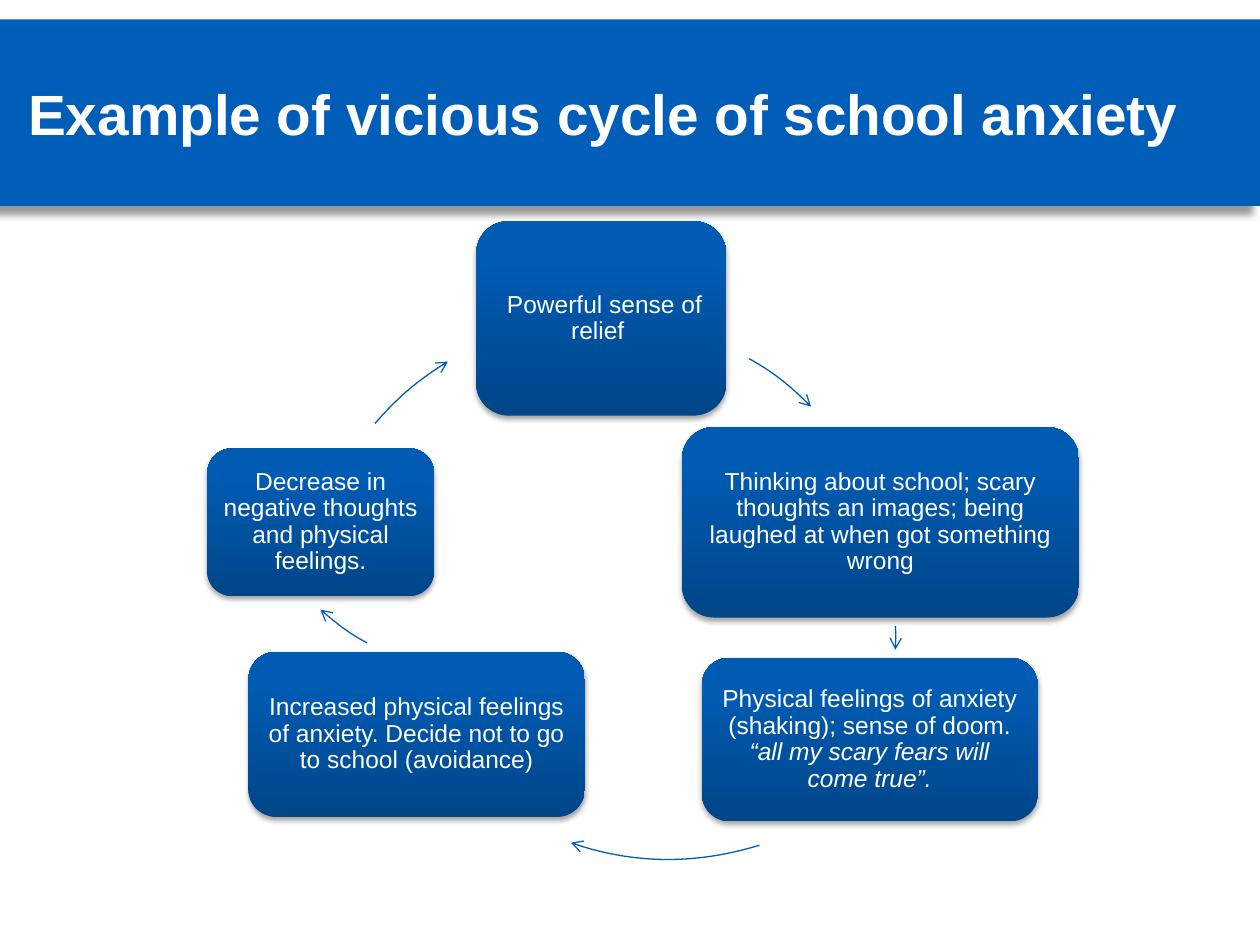
from copy import deepcopy
from typing import NamedTuple

from lxml.etree import SubElement as Sub
from pptx import Presentation
from pptx.dml.color import RGBColor
from pptx.enum.shapes import MSO_SHAPE as Kind
from pptx.enum.text import MSO_ANCHOR as Anchor, PP_ALIGN as Align
from pptx.oxml.ns import qn
from pptx.util import Cm, Pt

BLUE = RGBColor(0x00, 0x5E, 0xB8)
WHITE = RGBColor(0xFF, 0xFF, 0xFF)
STOPS = [
    (0, RGBColor(0x00, 0x46, 0x89)),
    (0.8, RGBColor(0x00, 0x5B, 0xB2)),
    (1, RGBColor(0x00, 0x5C, 0xB3)),
]
FONT = "Arial"
RING = 11.89  # side of the square around each curve's circle, in cm
Point = tuple[float, float]


class Run(NamedTuple):
    text: str
    size: float = 14
    bold: bool = False
    italic: bool = False


class Step(NamedTuple):
    left: float
    top: float
    width: float
    height: float
    runs: list[Run]


class Curve(NamedTuple):
    """Corner of the ring, then start, two control points and end, in cm."""
    ring: Point
    start: Point
    bend: Point
    pull: Point
    end: Point


STEPS = [
    Step(9.6, 4.46, 5.04, 3.92, [Run(" Powerful sense of relief ")]),
    Step(13.75, 8.61, 8, 3.84, [Run(
        "Thinking about school; scary thoughts an images; "
        "being laughed at when got something wrong")]),
    Step(14.15, 13.26, 6.77, 3.3, [
        Run("Physical feelings of anxiety (shaking); sense of doom. "),
        Run("“all my scary fears will come true”.", italic=True)]),
    Step(5.01, 13.14, 6.78, 3.33, [Run(
        "Increased physical feelings of anxiety. "
        "Decide not to go to school (avoidance)")]),
    Step(4.18, 9.04, 4.57, 2.98, [Run(
        "Decrease in negative thoughts and physical feelings.")]),
]
CURVES = [
    Curve((6.17, 6.43),
          (15.1, 7.23), (15.57, 7.49), (15.98, 7.82), (16.35, 8.2)),
    Curve((6.17, 6.86),
          (18.05, 12.62), (18.06, 12.78), (18.06, 12.94), (18.05, 13.1)),
    Curve((7.54, 5.44),
          (15.31, 17.04), (14.07, 17.42), (12.73, 17.42), (11.51, 16.99)),
    Curve((4.47, 1.91),
          (7.4, 12.96), (7.06, 12.78), (6.76, 12.55), (6.46, 12.29)),
    Curve((6.17, 6.43),
          (7.56, 8.54), (7.98, 8.05), (8.48, 7.62), (9.03, 7.29)),
]


def add_shade(shape, alpha: int, blur: float, dist: float, angle: int) -> None:
    """Give the shape an outer shadow; blur and distance are in points."""
    shape.shadow.inherit = False
    effects = shape._element.spPr.find(qn("a:effectLst"))
    shade = Sub(effects, qn("a:outerShdw"), blurRad=str(Pt(blur)),
                dist=str(Pt(dist)), dir=str(angle * 60000), rotWithShape="0")
    color = Sub(shade, qn("a:srgbClr"), val="000000")
    Sub(color, qn("a:alpha"), val=str(alpha * 1000))


def fill_grade(shape) -> None:
    fill = shape.fill
    fill.gradient()
    fill.gradient_angle = 90
    stops = shape._element.spPr.find(qn("a:gradFill")).find(qn("a:gsLst"))
    stops.append(deepcopy(stops[0]))
    for stop, (place, color) in zip(fill.gradient_stops, STOPS):
        stop.position = place
        stop.color.rgb = color


def write(shape, runs: list[Run], align: Align):
    frame = shape.text_frame
    frame.word_wrap = True
    frame.vertical_anchor = Anchor.MIDDLE
    para = frame.paragraphs[0]
    para.alignment = align
    for item in runs:
        run = para.add_run()
        run.text = item.text
        font = run.font
        font.name, font.size = FONT, Pt(item.size)
        font.bold, font.italic = item.bold, item.italic
        font.color.rgb = WHITE
    return frame


def add_title(shapes) -> None:
    band = shapes.add_shape(Kind.RECTANGLE, 0, Cm(0.39), Cm(25.4), Cm(3.76))
    band.fill.solid()
    band.fill.fore_color.rgb = BLUE
    band.line.fill.background()
    add_shade(band, 40, 4, 6, 135)
    box = shapes.add_textbox(Cm(0.32), Cm(0.69), Cm(24.59), Cm(3.18))
    title = Run("Example of vicious cycle of school anxiety", 32.4, bold=True)
    write(box, [title], Align.LEFT)


def add_step(shapes, step: Step) -> None:
    box = shapes.add_shape(Kind.ROUNDED_RECTANGLE, *map(Cm, step[:4]))
    fill_grade(box)
    box.line.fill.background()
    add_shade(box, 35, 3.1, 1.8, 90)
    frame = write(box, step.runs, Align.CENTER)
    frame.margin_left = frame.margin_right = Cm(0.15)
    frame.margin_top = frame.margin_bottom = Cm(0.15)
    frame.paragraphs[0].line_spacing = 0.9


def add_curve(shapes, curve: Curve) -> None:
    """Draw a cubic curve with an open arrowhead, framed by its ring."""
    left, top = curve.ring
    pen = shapes.build_freeform(Cm(left), Cm(top))
    pen.add_line_segments([(Cm(left + RING), Cm(top + RING))], close=False)
    arc = pen.convert_to_shape()
    arc.fill.background()
    arc.line.color.rgb = BLUE
    arc.line.width = Pt(0.75)
    arc.shadow.inherit = False
    props = arc._element.spPr
    Sub(props.find(qn("a:ln")), qn("a:tailEnd"), type="arrow")

    track = next(props.iter(qn("a:path")))
    for old in list(track):
        track.remove(old)
    for tag, points in (("a:moveTo", curve[1:2]), ("a:cubicBezTo", curve[2:])):
        move = Sub(track, qn(tag))
        for x, y in points:
            Sub(move, qn("a:pt"), x=str(Cm(x - left)), y=str(Cm(y - top)))


def main() -> None:
    deck = Presentation()
    deck.slide_width, deck.slide_height = Cm(25.4), Cm(19.05)
    shapes = deck.slides.add_slide(deck.slide_layouts[6]).shapes
    add_title(shapes)
    for step, curve in zip(STEPS, CURVES):
        add_step(shapes, step)
        add_curve(shapes, curve)
    deck.save("out.pptx")


if __name__ == "__main__":
    main()
